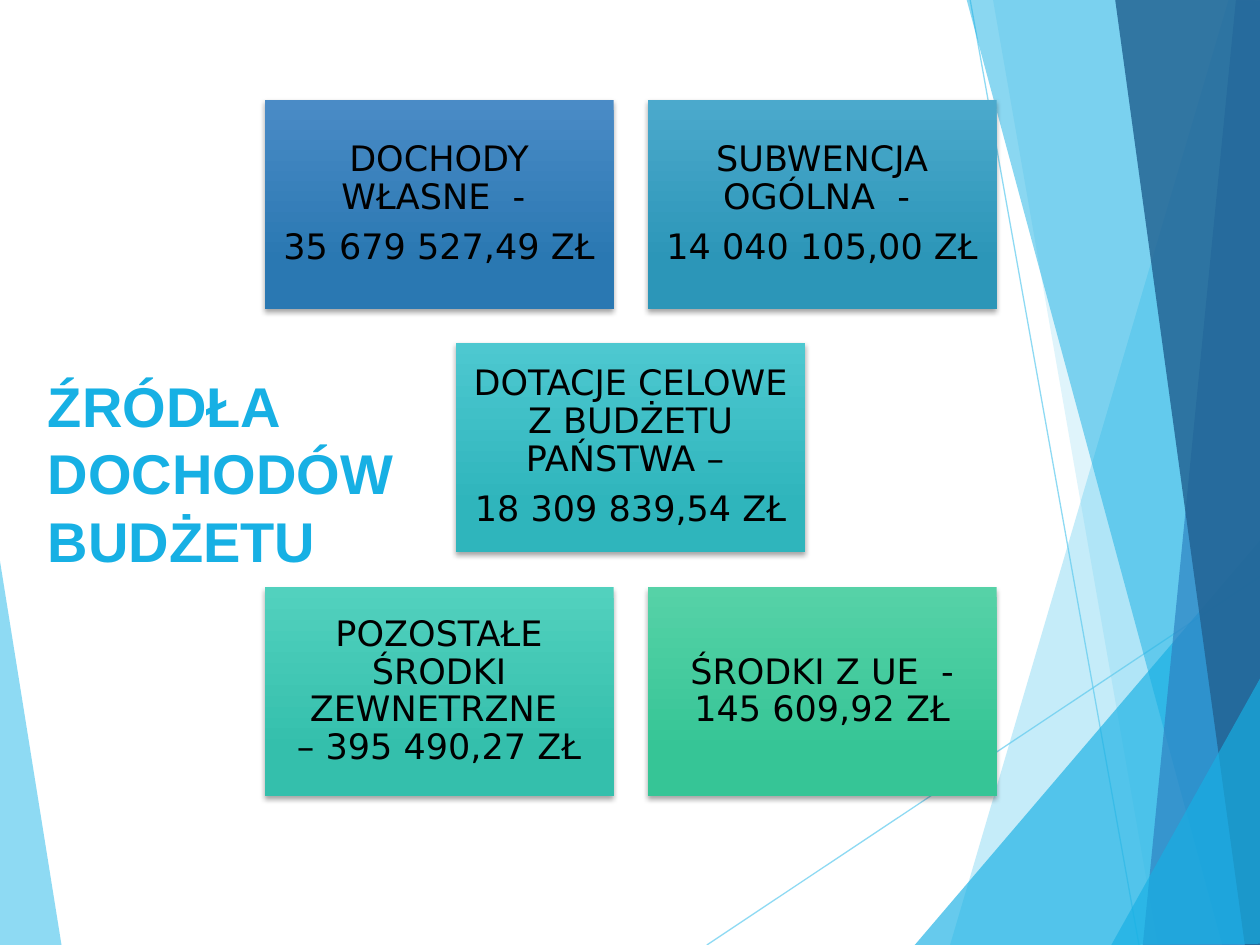
from lxml import etree
from pptx import Presentation
from pptx.dml.color import RGBColor
from pptx.enum.shapes import MSO_CONNECTOR, MSO_SHAPE
from pptx.enum.text import MSO_ANCHOR, MSO_AUTO_SIZE, PP_ALIGN
from pptx.oxml.ns import qn
from pptx.util import Pt

PX = 9144  # EMU per px, 100 px to the inch
RECT = MSO_SHAPE.RECTANGLE
LINE = MSO_CONNECTOR.STRAIGHT
MIDDLE = MSO_ANCHOR.MIDDLE
LEFT, CENTER = PP_ALIGN.LEFT, PP_ALIGN.CENTER

SKY, BLUE, STEEL, NAVY = "5FCBEF", "17B0E4", "2E83C3", "226292"

# Points, colour, opacity in percent
WEDGE = ([(-1, 439), (49, 751), (-1, 750)], SKY, 70)
RAYS = [
    ((561, 750), (1001, 457)),
    ((770, 0), (904, 750)),
]
FACETS = [
    ([(975, 0), (754, 750), (1002, 751), (1001, 1)], SKY, 36),
    ([(788, -1), (919, 750), (1001, 750), (1001, -1)], SKY, 20),
    ([(726, 750), (1000, 429), (1001, 750)], BLUE, 66),
    ([(767, -1), (970, 750), (1001, 749), (1001, -1)], BLUE, 50),
    ([(981, -1), (907, 750), (1001, 750), (1000, -1)], STEEL, 70),
    ([(885, -1), (988, 750), (1002, 750), (1000, -1)], NAVY, 82),
    ([(882, 750), (1002, 535), (1002, 749)], BLUE, 66),
]

# Column and row in half steps, top colour, bottom colour, paragraphs
CARDS = [
    (0, 0, "4A8BC6", "2A78B2", ["DOCHODY WŁASNE  - ", "35 679 527,49 ZŁ"]),
    (2, 0, "4BA9CC", "2C96B8", ["SUBWENCJA OGÓLNA  - ", "14 040 105,00 ZŁ"]),
    (1, 1, "4DC8D0", "2FB5BC",
     ["DOTACJE CELOWE Z BUDŻETU PAŃSTWA – ", "18 309 839,54 ZŁ"]),
    (0, 2, "52D1BE", "34BFAC",
     ["POZOSTAŁE ŚRODKI ZEWNETRZNE \n– 395 490,27 ZŁ"]),
    (2, 2, "56D2A7", "36C596", ["ŚRODKI Z UE  - 145 609,92 ZŁ"]),
]


def rgb(code):
    return RGBColor.from_string(code)


def add(node, tag, **attrs):
    return etree.SubElement(node, qn(tag), attrs)


def fade(shape, part):
    """Set the opacity, in percent, of the shape's only plain colour."""
    color = next(shape.element.iter(qn("a:srgbClr")))
    add(color, "a:alpha", val=str(part * 1000))


def write(frame, texts, size=20, font="DejaVu Sans", color="000000",
          bold=False, align=CENTER, inset=None, line=None, after=None):
    frame.word_wrap = True
    frame.auto_size = MSO_AUTO_SIZE.NONE
    frame.vertical_anchor = MIDDLE
    if inset is not None:
        frame.margin_left = frame.margin_right = inset * PX
        frame.margin_top = frame.margin_bottom = inset * PX
    for i, text in enumerate(texts):
        para = frame.add_paragraph() if i else frame.paragraphs[0]
        para.text = text
        para.alignment = align
        if line:
            para.line_spacing = line
        if after is not None:
            para.space_after = Pt(after)
        for run in para.runs:
            run.font.size = Pt(size)
            run.font.name = font
            run.font.bold = bold
            run.font.color.rgb = rgb(color)


class Deck:
    def __init__(self, wide, high):
        self.file = Presentation()
        self.file.slide_width = wide * PX
        self.file.slide_height = high * PX
        self.slide = self.file.slides.add_slide(self.file.slide_layouts[5])
        self.shapes = self.slide.shapes

    def facet(self, points, color, part):
        pen = self.shapes.build_freeform(*points[0], scale=PX)
        pen.add_line_segments(points[1:], close=True)
        shape = pen.convert_to_shape()
        shape.shadow.inherit = False
        shape.fill.solid()
        shape.fill.fore_color.rgb = rgb(color)
        shape.line.fill.background()
        fade(shape, part)

    def ray(self, start, end):
        ray = self.shapes.add_connector(
            LINE, *(n * PX for n in start + end))
        ray.line.color.rgb = rgb(SKY)
        ray.line.width = Pt(0.75)
        fade(ray, 70)
        add(ray.element.spPr, "a:effectLst")

    def title(self, text, x, y, w, h):
        """Fill the title and bring it in front of what is drawn so far."""
        title = self.shapes.title
        title.left, title.top = x * PX, y * PX
        title.width, title.height = w * PX, h * PX
        write(title.text_frame, [text], size=32, font="Arial", color=BLUE,
              bold=True, align=LEFT)
        title.element.getparent().append(title.element)

    def card(self, x, y, w, h, top, base, texts):
        card = self.shapes.add_shape(RECT, x * PX, y * PX, w * PX, h * PX)
        card.fill.gradient()
        card.fill.gradient_angle = 270
        stops = card.fill.gradient_stops
        for stop, place, color in zip(stops, (0, 0.78), (top, base)):
            stop.position = place
            stop.color.rgb = rgb(color)
        card.line.fill.background()
        self.shade(card)
        write(card.text_frame, texts, inset=8, line=0.9, after=7)

    def shade(self, shape):
        """Give the shape a soft shadow straight below it."""
        shape.shadow.inherit = False
        effects = shape.element.spPr.find(qn("a:effectLst"))
        shadow = add(effects, "a:outerShdw", blurRad=str(Pt(3)),
                     dist=str(Pt(2)), dir="5400000", rotWithShape="0")
        color = add(shadow, "a:srgbClr", val="000000")
        add(color, "a:alpha", val="35000")


def main():
    deck = Deck(1000, 750)
    deck.facet(*WEDGE)
    for start, end in RAYS:
        deck.ray(start, end)
    for facet in FACETS:
        deck.facet(*facet)
    deck.title("ŹRÓDŁA DOCHODÓW BUDŻETU", 28, 151, 296, 448)
    for col, row, top, base, texts in CARDS:
        deck.card(210 + 152 * col, 79 + 387 * row // 2, 277, 166,
                  top, base, texts)
    deck.file.save("out.pptx")


if __name__ == "__main__":
    main()
